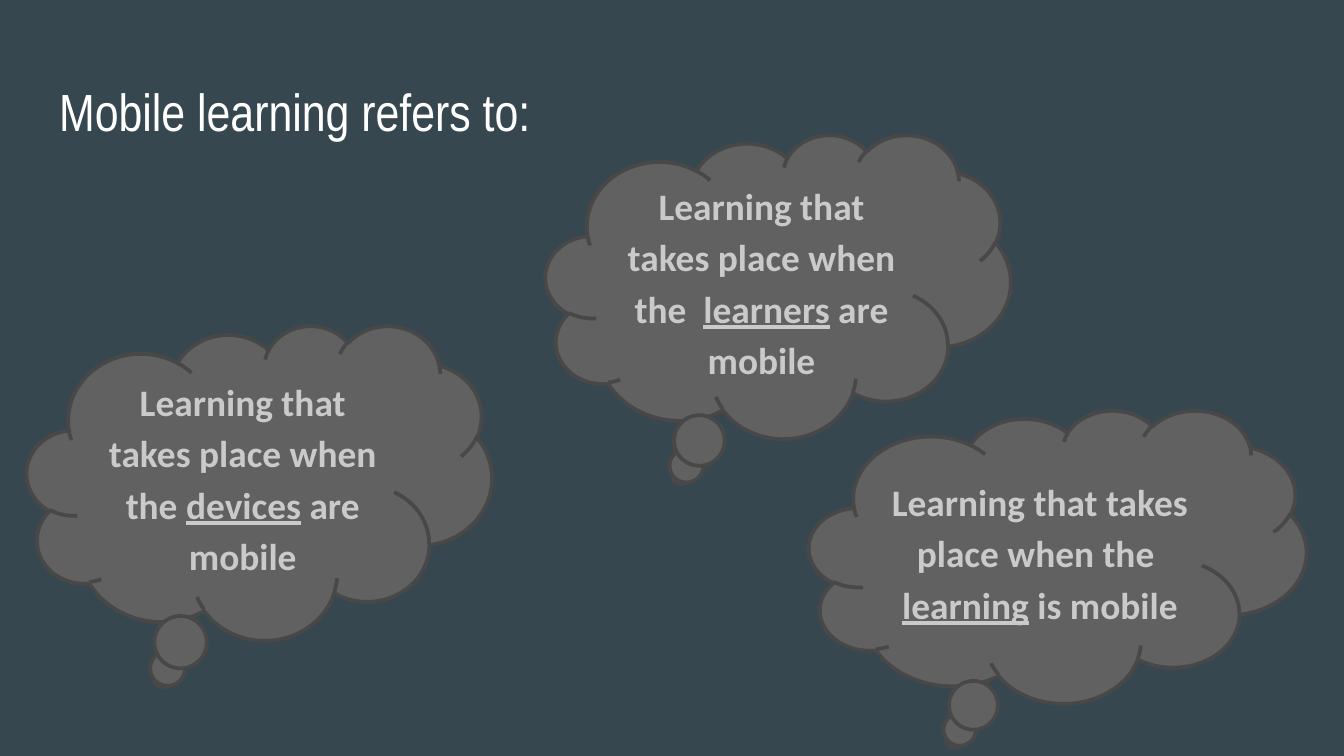
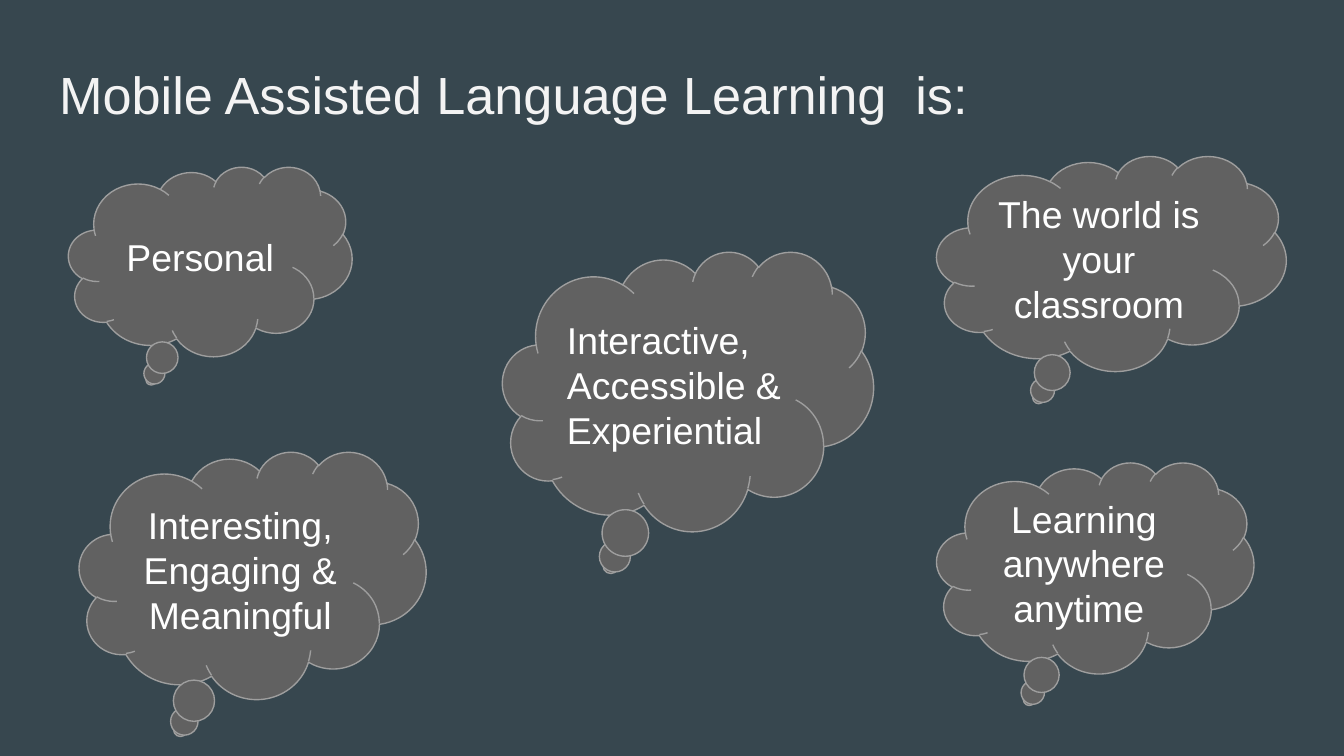
"""Build two slides of thought clouds about mobile learning."""
from pptx import Presentation
from pptx.dml.color import RGBColor
from pptx.enum.shapes import MSO_SHAPE as Shape
from pptx.enum.text import MSO_ANCHOR as Anchor, MSO_AUTO_SIZE as AutoSize, PP_ALIGN as Align
from pptx.util import Inches, Pt

SLATE = RGBColor(0x37, 0x47, 0x4F)
CLOUD_GREY = RGBColor(0x61, 0x61, 0x61)
DARK_EDGE = RGBColor(0x48, 0x48, 0x48)
LIGHT_EDGE = RGBColor(0x9E, 0x9E, 0x9E)
PALE_GREY = RGBColor(0xCA, 0xCA, 0xCA)
OFF_WHITE = RGBColor(0xF3, 0xF3, 0xF3)
WHITE = RGBColor(0xFF, 0xFF, 0xFF)

SLIDE_WIDTH = Inches(10)
SLIDE_HEIGHT = SLIDE_WIDTH * 9 // 16
TITLE_LEFT, TITLE_WIDTH = 0.34, 9.32
MARGINS = ("margin_left", "margin_top", "margin_right", "margin_bottom")

DEFINITION_STYLE = {
    "edge": (DARK_EDGE, 2),
    "font": {"name": "Calibri", "size": Pt(20), "bold": True},
    "color": PALE_GREY,
    "para": {"line_spacing": 1.15, "space_after": Pt(16)},
}
QUALITY_STYLE = {
    "edge": (LIGHT_EDGE, 0.75),
    "font": {"name": "Arial", "size": Pt(20)},
    "color": WHITE,
    "para": {},
}

SLIDES = [
    {
        "title": "Mobile learning refers to:",
        "place": (0.49, 0.63),
        "font": "Arial Narrow",
        "color": WHITE,
        "style": DEFINITION_STYLE,
        "clouds": [
            ((0.2, 2.42, 3.46, 2.34), Align.CENTER,
             [("Learning that takes place when the ", "devices", " are mobile")]),
            ((4.06, 1, 3.46, 2.26), Align.CENTER,
             [("Learning that takes place when the  ", "learners", " are mobile")]),
            ((6.02, 3.05, 3.7, 2.18), Align.CENTER,
             [("Learning that takes place when the  ", "learning", " is mobile")]),
        ],
    },
    {
        "title": "Mobile Assisted Language Learning  is:",
        "place": (0.36, 0.98),
        "font": "Arial",
        "color": OFF_WHITE,
        "style": QUALITY_STYLE,
        "clouds": [
            ((0.51, 1.24, 2.11, 1.41), Align.CENTER, [("Personal",)]),
            ((3.74, 1.87, 2.76, 2.08), Align.LEFT,
             [("Interactive,",), ("Accessible &",), ("Experiential",)]),
            ((0.59, 3.36, 2.58, 1.84), Align.CENTER,
             [("Interesting, Engaging & Meaningful",)]),
            ((6.97, 3.44, 2.36, 1.57), Align.CENTER, [("Learning anywhere anytime ",)]),
            ((6.97, 1.16, 2.6, 1.6), Align.CENTER, [("The world is your classroom",)]),
        ],
    },
]


def apply(target, values):
    """Set each named attribute of the target."""
    for name, value in values.items():
        setattr(target, name, value)


def format_frame(frame, anchor):
    """Give a text frame the shared insets, wrapping and anchor."""
    apply(frame, dict.fromkeys(MARGINS, Inches(0.1)))
    apply(frame, {"word_wrap": True, "auto_size": AutoSize.NONE, "vertical_anchor": anchor})


def add_title(page, content):
    """Fill and place the title placeholder."""
    title = page.shapes.title
    top, height = content["place"]
    apply(title, {"left": Inches(TITLE_LEFT), "top": Inches(top),
                  "width": Inches(TITLE_WIDTH), "height": Inches(height)})
    format_frame(title.text_frame, Anchor.TOP)
    para = title.text_frame.paragraphs[0]
    para.alignment = Align.LEFT
    span = para.add_run()
    span.text = content["title"]
    apply(span.font, {"name": content["font"], "size": Pt(28)})
    span.font.color.rgb = content["color"]


def add_cloud(page, place, alignment, paragraphs, style):
    """Draw one thought cloud, underlining every second span of its text."""
    cloud = page.shapes.add_shape(Shape.CLOUD_CALLOUT, *map(Inches, place))
    cloud.shadow.inherit = False
    cloud.fill.solid()
    cloud.fill.fore_color.rgb = CLOUD_GREY
    edge_color, edge_width = style["edge"]
    cloud.line.color.rgb = edge_color
    cloud.line.width = Pt(edge_width)
    frame = cloud.text_frame
    format_frame(frame, Anchor.MIDDLE)
    for row, texts in enumerate(paragraphs):
        para = frame.add_paragraph() if row else frame.paragraphs[0]
        apply(para, {"alignment": alignment, **style["para"]})
        for position, text in enumerate(texts):
            span = para.add_run()
            span.text = text
            apply(span.font, {**style["font"], "underline": position % 2 == 1})
            span.font.color.rgb = style["color"]


def main():
    """Build and save the deck."""
    deck = Presentation()
    deck.slide_width, deck.slide_height = SLIDE_WIDTH, SLIDE_HEIGHT
    background = deck.slide_master.background.fill
    background.solid()
    background.fore_color.rgb = SLATE
    title_only = deck.slide_layouts.get_by_name("Title Only")
    for content in SLIDES:
        page = deck.slides.add_slide(title_only)
        add_title(page, content)
        for place, alignment, paragraphs in content["clouds"]:
            add_cloud(page, place, alignment, paragraphs, content["style"])
    deck.save("out.pptx")


if __name__ == "__main__":
    main()
